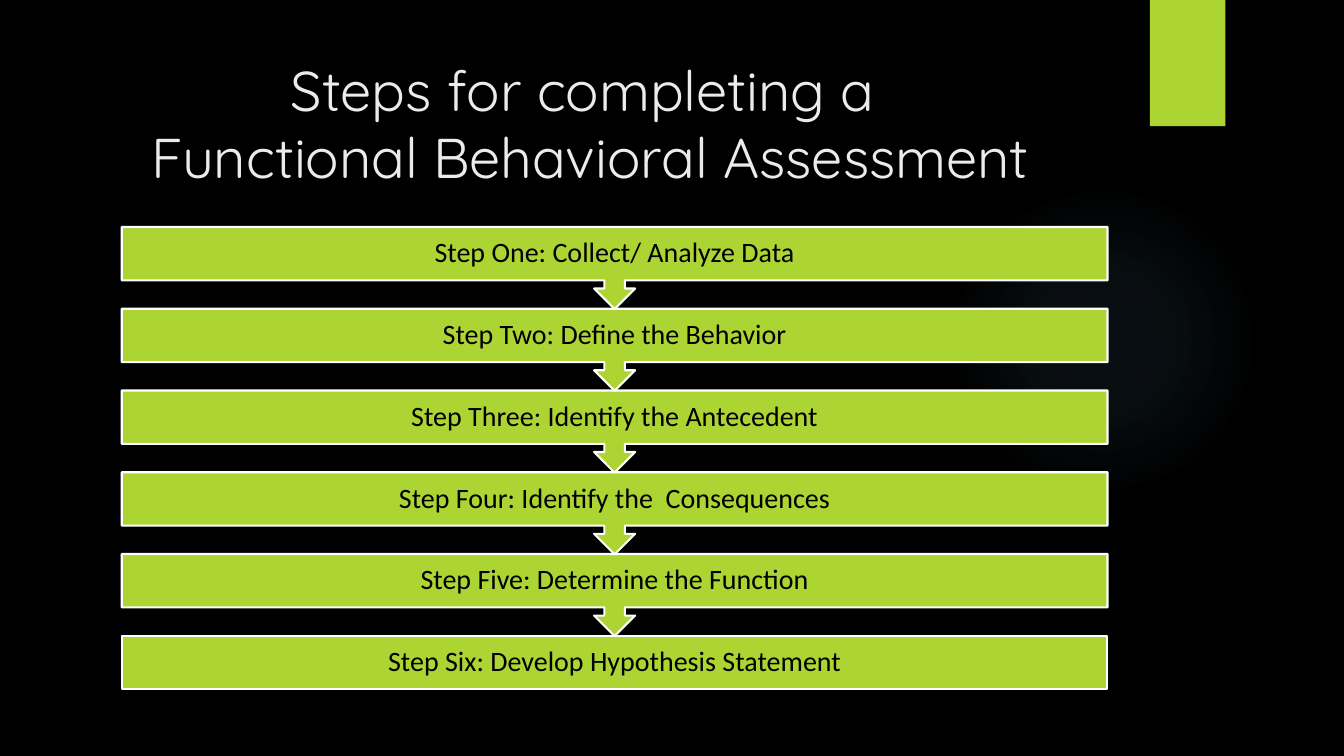
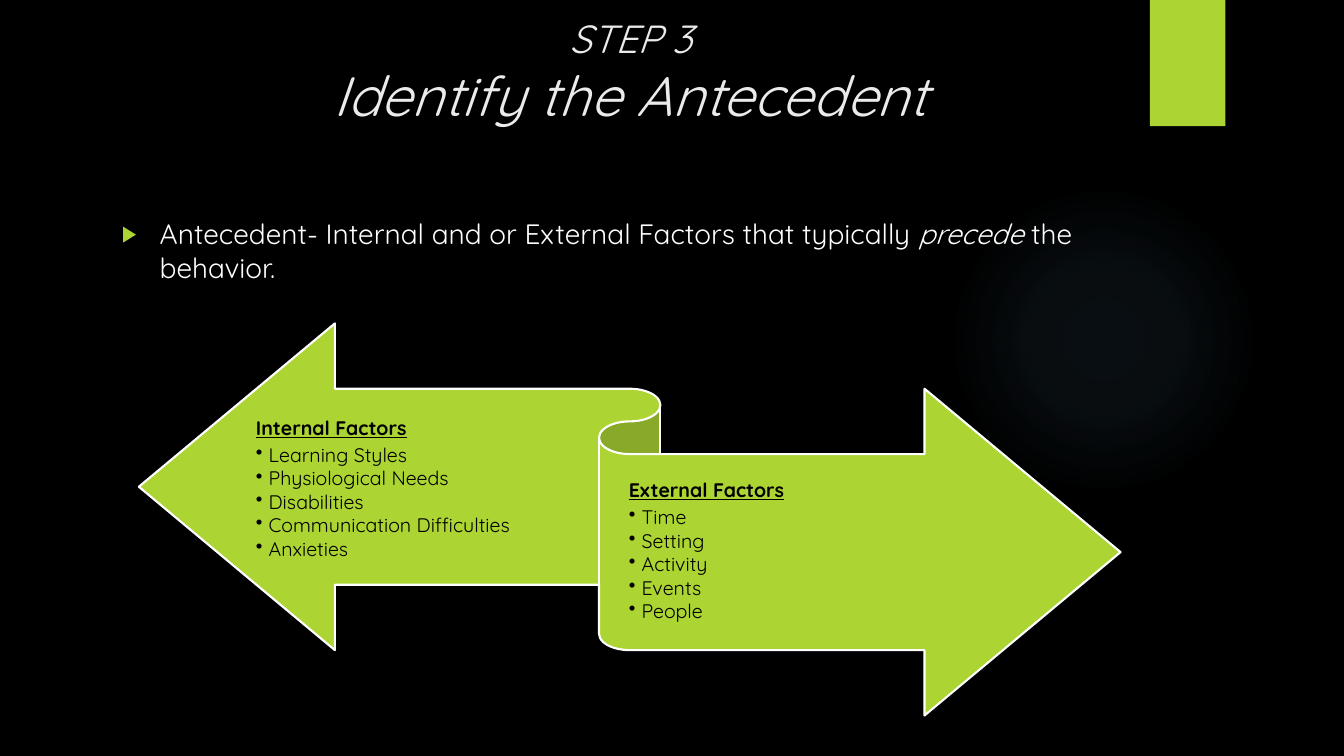
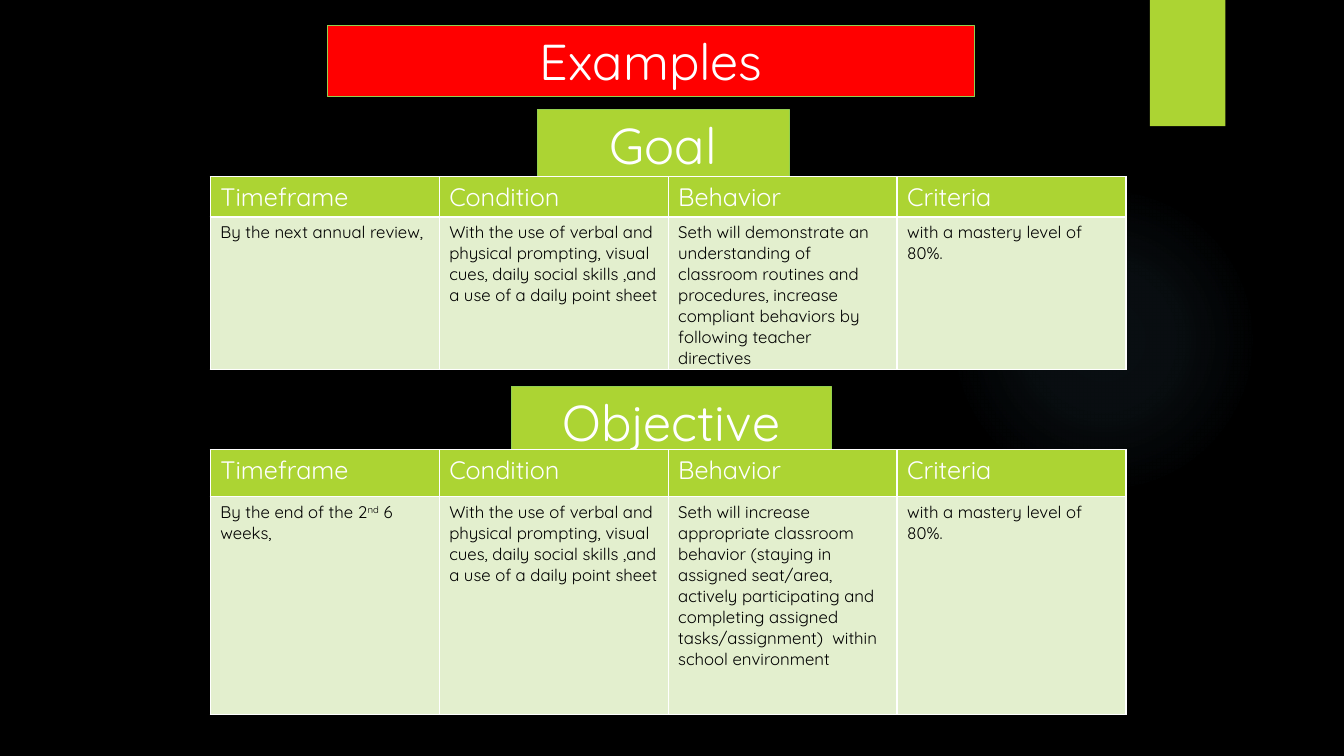
from pptx import Presentation
from pptx.dml.color import RGBColor
from pptx.enum.shapes import MSO_SHAPE as SHAPE
from pptx.enum.text import MSO_ANCHOR as ANCHOR, MSO_AUTO_SIZE as AUTO, PP_ALIGN as ALIGN
from pptx.oxml import parse_xml
from pptx.oxml.ns import nsdecls, qn
from pptx.util import Cm, Pt
from lxml import etree

BLACK, WHITE, RED = "000000", "FFFFFF", "FF0000"
LIME, LIME_EDGE, LIME_PALE = "ACD433", "92D050", "E3EFCE"
TITLE_GREY, GLOW = "EBEBEB", "7AC4F0"
FONT, STEP_FONT = "Quicksand", "Calibri"
TITLE_ONLY, TITLE_AND_BODY = 5, 1

STEPS = [
    "Step One: Collect/ Analyze Data",
    "Step Two: Define the Behavior",
    "Step Three: Identify the Antecedent",
    "Step Four: Identify the  Consequences",
    "Step Five: Determine the Function",
    "Step Six: Develop Hypothesis Statement",
]
INTERNAL = ["Learning Styles", "Physiological Needs", "Disabilities",
            "Communication Difficulties", "Anxieties"]
EXTERNAL = ["Time", "Setting", "Activity", "Events", "People"]

HEADERS = ["Timeframe", "Condition", "Behavior", "Criteria"]
CONDITION = ("With the use of verbal and physical prompting, visual cues, "
             "daily social skills ,and a use of a daily point sheet")
CRITERIA = "with a mastery level of 80%."
# Each cell is a list of paragraphs.
GOAL = [
    ["By the next annual review,"],
    [CONDITION],
    ["Seth will demonstrate an understanding of classroom routines and "
     "procedures, increase",
     "compliant behaviors by following teacher directives"],
    [CRITERIA],
]
OBJECTIVE = [
    [["By the end of the 2", ("nd", {"baseline": 30}), " 6 weeks,"]],
    [CONDITION],
    ["Seth will increase appropriate classroom behavior (staying in assigned "
     "seat/area, actively participating and completing assigned "
     "tasks/assignment)  within school environment"],
    [CRITERIA],
]


def rgb(color):
    return RGBColor.from_string(color)


def box(left, top, width, height):
    return Cm(left), Cm(top), Cm(width), Cm(height)


def place(shape, area):
    shape.left, shape.top, shape.width, shape.height = box(*area)


def paint(shape, fill, line=None, width=0.75):
    shape.fill.solid()
    shape.fill.fore_color.rgb = rgb(fill)
    if line:
        shape.line.color.rgb = rgb(line)
        shape.line.width = Pt(width)
    else:
        shape.line.fill.background()


def add_preset(s, kind, area, fill, line=None, width=0.75):
    shape = s.shapes.add_shape(kind, *box(*area))
    shape.shadow.inherit = False
    paint(shape, fill, line, width)
    return shape


def set_bullet(p, char, indent, color=None, percent=None):
    pPr = p._p.get_or_add_pPr()
    pPr.set("marL", str(Cm(indent)))
    pPr.set("indent", str(-Cm(indent)))
    if color:
        clr = etree.SubElement(pPr, qn("a:buClr"))
        etree.SubElement(clr, qn("a:srgbClr")).set("val", color)
    if percent:
        etree.SubElement(pPr, qn("a:buSzPct")).set("val", str(percent * 1000))
    etree.SubElement(pPr, qn("a:buChar")).set("char", char)


def write(tf, runs, size=14, color=BLACK, font=FONT, bold=False, italic=False,
          underline=False, align=ALIGN.LEFT, spacing=None, after=0, bullet=None):
    """Add one paragraph; runs is a string or a list of strings and (text, changes)."""
    p = tf.add_paragraph() if tf.text else tf.paragraphs[0]
    if bullet:
        set_bullet(p, **bullet)
    p.alignment = align
    p.space_before, p.space_after = Pt(0), Pt(after)
    if spacing:
        p.line_spacing = spacing
    for run in [runs] if isinstance(runs, str) else runs:
        text, changes = (run, {}) if isinstance(run, str) else run
        r = p.add_run()
        r.text = text
        f = r.font
        f.name, f.size, f.color.rgb = font, Pt(size), rgb(color)
        f.bold, f.underline = bold, underline
        f.italic = changes.get("italic", italic)
        if "baseline" in changes:
            r._r.get_or_add_rPr().set("baseline", str(changes["baseline"] * 1000))


def frame(shape, anchor=ANCHOR.TOP):
    tf = shape.text_frame
    tf.word_wrap, tf.auto_size, tf.vertical_anchor = True, AUTO.NONE, anchor
    return tf


def add_slide(prs, layout, title_area, title_lines, **fmt):
    """Add a slide whose title has one (text, size) pair per line."""
    s = prs.slides.add_slide(prs.slide_layouts[layout])
    place(s.shapes.title, title_area)
    tf = frame(s.shapes.title)
    for text, size in title_lines:
        write(tf, text, size=size, align=ALIGN.CENTER, **{"color": TITLE_GREY, **fmt})
    return s


def decorate_master(prs, s):
    """Give the master its black ground, glow and corner tab, drawn first on s."""
    master = prs.slide_master
    master.background.fill.solid()
    master.background.fill.fore_color.rgb = rgb(BLACK)
    glow = add_preset(s, SHAPE.OVAL, (23.9, 4.65, 7.82, 7.82), GLOW)
    stops = "".join(
        f'<a:gs pos="{pos}000"><a:srgbClr val="{GLOW}">'
        f'<a:alpha val="{alpha}000"/></a:srgbClr></a:gs>'
        for pos, alpha in [(0, 7), (36, 6), (69, 0), (100, 0)])
    gradient = parse_xml(
        f'<a:gradFill {nsdecls("a")} rotWithShape="1"><a:gsLst>{stops}</a:gsLst>'
        '<a:path path="circle"><a:fillToRect l="50000" t="50000" r="50000" b="50000"/>'
        '</a:path></a:gradFill>')
    spPr = glow.element.spPr
    spPr.replace(spPr.find(qn("a:solidFill")), gradient)
    tab = add_preset(s, SHAPE.RECTANGLE, (28.98, 0, 1.9, 3.18), LIME)
    for number, shape in enumerate([glow, tab], 101):
        shape.element.nvSpPr.cNvPr.set("id", str(number))
        master.element.cSld.spTree.append(shape.element)


def add_steps(s, left=3.07, top=5.72, width=24.84, pitch=2.06, bar=1.35):
    last = len(STEPS) - 1
    for i in range(last, -1, -1):
        kind, height = ((SHAPE.RECTANGLE, bar) if i == last
                        else (SHAPE.DOWN_ARROW_CALLOUT, 2.07))
        step = add_preset(s, kind, (left, top + i * pitch, width, height),
                          LIME, WHITE, 1.5)
        tf = frame(step, ANCHOR.MIDDLE)
        tf.margin_top = tf.margin_bottom = 0
        write(tf, STEPS[i], size=20, font=STEP_FONT, align=ALIGN.CENTER, spacing=0.9)


def add_factors(s, area, heading, factors):
    tf = frame(s.shapes.add_textbox(*box(*area)), ANCHOR.MIDDLE)
    tf.margin_left = tf.margin_right = 0
    write(tf, heading, bold=True, underline=True, spacing=0.9, after=4.2)
    for factor in factors:
        write(tf, factor, spacing=0.9, after=1.6,
              bullet={"char": "•", "indent": 0.32})


def add_label(s, area, text):
    label = add_preset(s, SHAPE.RECTANGLE, area, LIME, LIME_EDGE)
    write(frame(label), text, size=36, color=WHITE, align=ALIGN.CENTER)


def set_borders(cell, color=WHITE, width=1):
    tcPr = cell._tc.get_or_add_tcPr()
    for i, side in enumerate(["lnL", "lnR", "lnT", "lnB"]):
        tcPr.insert(i, parse_xml(
            f'<a:{side} {nsdecls("a")} w="{Pt(width)}"><a:solidFill>'
            f'<a:srgbClr val="{color}"/></a:solidFill></a:{side}>'))


def add_plan_table(s, top, heights, body, left=5.3, column=5.77):
    rows = [[[h] for h in HEADERS], body]
    looks = [(LIME, 18, WHITE), (LIME_PALE, 12, BLACK)]
    area = box(left, top, column * len(HEADERS), sum(heights))
    table = s.shapes.add_table(len(rows), len(HEADERS), *area).table
    table.horz_banding = False
    for col in table.columns:
        col.width = Cm(column)
    for i, (cells, (fill, size, color)) in enumerate(zip(rows, looks)):
        table.rows[i].height = Cm(heights[i])
        for j, paragraphs in enumerate(cells):
            cell = table.cell(i, j)
            cell.margin_bottom = 0
            cell.fill.solid()
            cell.fill.fore_color.rgb = rgb(fill)
            set_borders(cell)
            for runs in paragraphs:
                write(cell.text_frame, runs, size=size, color=color)


def steps_slide(prs):
    s = add_slide(prs, TITLE_ONLY, (1.8, 1.27, 26.14, 3.89),
                  [("Steps for completing a ", 40),
                   ("Functional Behavioral Assessment", 40)])
    decorate_master(prs, s)
    add_steps(s)


def antecedent_slide(prs):
    s = add_slide(prs, TITLE_AND_BODY, (2.82, 0.23, 26.14, 3.89),
                  [("STEP 3", 28), ("Identify the Antecedent", 39.6)], italic=True)
    body = s.placeholders[1]
    place(body, (2.82, 5.33, 24.84, 2.4))
    write(frame(body),
          ["Antecedent- Internal and or External Factors that typically ",
           ("precede", {"italic": True}), " the behavior."],
          size=20, color=WHITE,
          bullet={"char": "▶", "indent": 0.95, "color": LIME, "percent": 80})
    add_preset(s, SHAPE.LEFT_RIGHT_RIBBON, (3.5, 8.15, 24.74, 9.88), LIME, WHITE, 1.5)
    add_factors(s, (6.45, 9.91, 8.15, 4.85), "Internal Factors", INTERNAL)
    add_factors(s, (15.85, 11.48, 9.65, 4.85), "External Factors", EXTERNAL)


def examples_slide(prs):
    s = add_slide(prs, TITLE_ONLY, (8.26, 0.64, 16.3, 1.8),
                  [("Examples", 36)], color=WHITE)
    paint(s.shapes.title, RED, LIME_EDGE)
    add_label(s, (12.9, 9.73, 8.05, 1.8), "Objective")
    add_label(s, (13.54, 2.75, 6.35, 1.8), "Goal")
    add_plan_table(s, 4.45, (1.02, 3.8), GOAL)
    add_plan_table(s, 11.33, (1.19, 5.48), OBJECTIVE)


def main():
    prs = Presentation()
    prs.slide_width, prs.slide_height = Cm(33.87), Cm(19.05)
    steps_slide(prs)
    antecedent_slide(prs)
    examples_slide(prs)
    prs.save("out.pptx")


if __name__ == "__main__":
    main()
